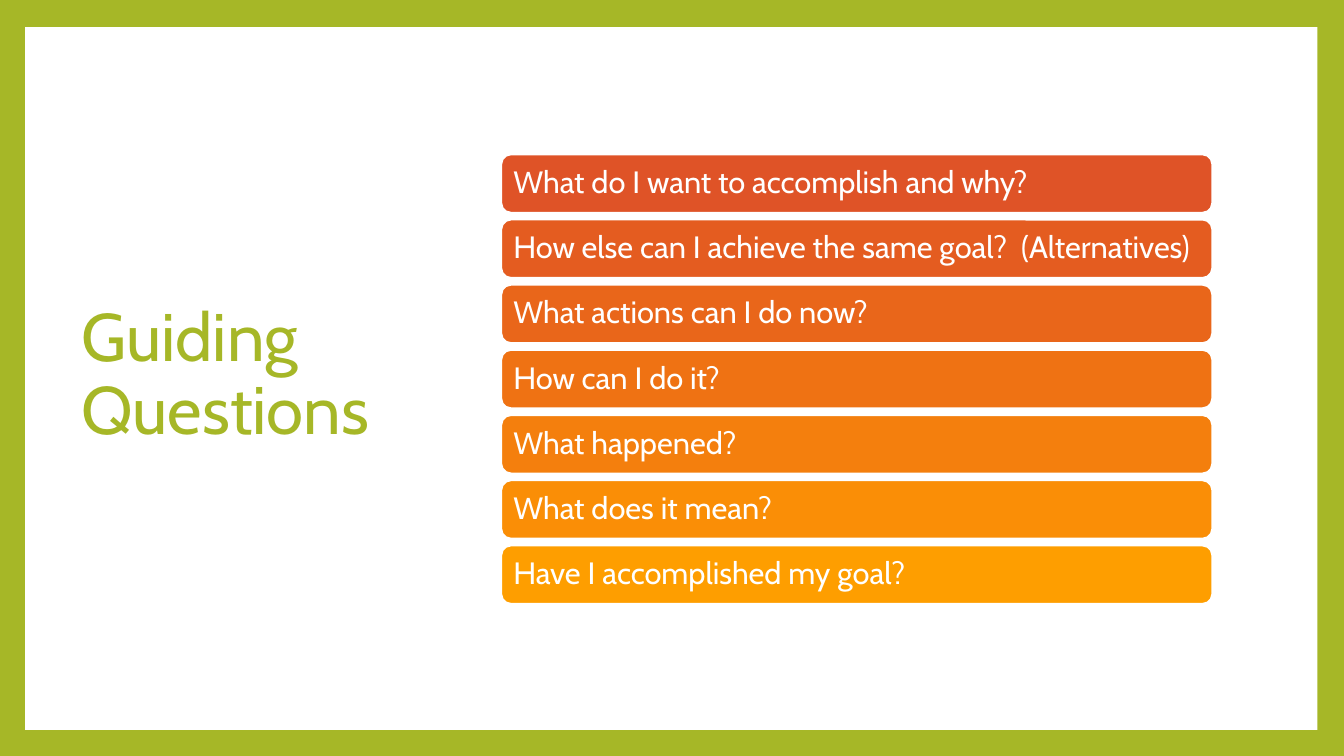
import dataclasses

import pptx
import pptx.dml.color
import pptx.enum.shapes
import pptx.enum.text
import pptx.util

Pt = pptx.util.Pt
RGB = pptx.dml.color.RGBColor.from_string
SHAPES = pptx.enum.shapes.MSO_SHAPE


@dataclasses.dataclass(frozen=True)
class Theme:
    font: str = "Cabin"
    green: str = "A6B727"
    white: str = "FFFFFF"
    bar_fills: tuple = ("DF5327", "E45C20", "E9661A", "EF7213",
                        "F47F0D", "FA8E06", "FE9E00")
    title_size: float = 48
    question_size: float = 22


THEME = Theme()

QUESTIONS = (
    "What do I want to accomplish and why?",
    "How else can I achieve the same goal?  (Alternatives)",
    "What actions can I do now?",
    "How can I do it?",
    "What happened?",
    "What does it mean?",
    "Have I accomplished my goal?",
)

# Question bars, in points
BAR_LEFT, BAR_TOP, BAR_WIDTH, BAR_HEIGHT = 358, 110.2, 508, 41.8
BAR_PITCH = 46.56


def set_text(shape, text, size, color):
    """Write one left-aligned, vertically centred paragraph."""
    frame = shape.text_frame
    frame.text = text
    frame.word_wrap = True
    frame.auto_size = pptx.enum.text.MSO_AUTO_SIZE.NONE
    frame.vertical_anchor = pptx.enum.text.MSO_ANCHOR.MIDDLE
    paragraph = frame.paragraphs[0]
    paragraph.alignment = pptx.enum.text.PP_ALIGN.LEFT
    paragraph.line_spacing = 0.9
    for run in paragraph.runs:
        run.font.name = THEME.font
        run.font.size = Pt(size)
        run.font.color.rgb = RGB(color)


def add_block(shapes, kind, left, top, width, height, fill):
    block = shapes.add_shape(kind, Pt(left), Pt(top), Pt(width), Pt(height))
    block.shadow.inherit = False
    block.fill.solid()
    block.fill.fore_color.rgb = RGB(fill)
    block.line.fill.background()
    return block


def add_frame(slide):
    """Green background with a white panel behind the title."""
    slide.background.fill.solid()
    slide.background.fill.fore_color.rgb = RGB(THEME.green)
    panel = add_block(slide.shapes, SHAPES.RECTANGLE,
                      18, 19.4, 923, 502, THEME.white)
    slide.shapes.title._element.addprevious(panel._element)


def place_title(slide, text):
    title = slide.shapes.title
    title.left, title.top = Pt(51), Pt(48.2)
    title.width, title.height = Pt(265), Pt(441.4)
    set_text(title, text, THEME.title_size, THEME.green)


def add_question(shapes, row, question, fill):
    bar = add_block(shapes, SHAPES.ROUNDED_RECTANGLE, BAR_LEFT,
                    BAR_TOP + row * BAR_PITCH, BAR_WIDTH, BAR_HEIGHT, fill)
    bar.line.color.rgb = RGB(THEME.white)
    bar.line.width = Pt(1.5)
    frame = bar.text_frame
    frame.margin_left = frame.margin_right = Pt(6.6)
    frame.margin_top = frame.margin_bottom = Pt(6.6)
    set_text(bar, question, THEME.question_size, THEME.white)


def main():
    deck = pptx.Presentation()
    deck.slide_width, deck.slide_height = Pt(960), Pt(540)
    title_only = deck.slide_layouts[5]
    slide = deck.slides.add_slide(title_only)

    # Frame and title
    add_frame(slide)
    place_title(slide, "Guiding Questions")

    # Stack of questions
    stack = slide.shapes.add_group_shape()
    for row, (question, fill) in enumerate(zip(QUESTIONS, THEME.bar_fills)):
        add_question(stack.shapes, row, question, fill)

    deck.save("out.pptx")


if __name__ == "__main__":
    main()
